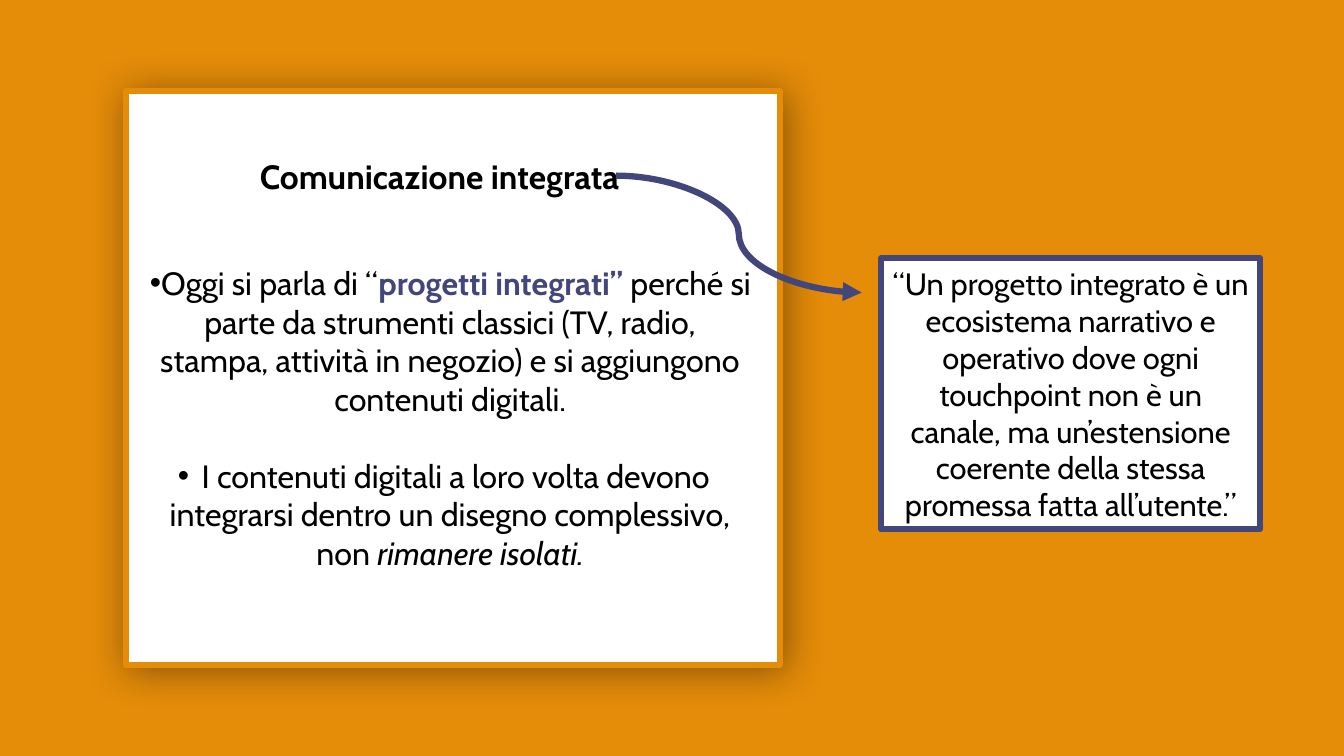
from lxml import etree
from pptx import Presentation
from pptx.dml import color
from pptx.enum import shapes, text
from pptx.oxml import ns
from pptx.util import Pt

ORANGE = color.RGBColor(0xE5, 0x8C, 0x09)
INDIGO = color.RGBColor(0x43, 0x46, 0x7B)
WHITE = color.RGBColor(0xFF, 0xFF, 0xFF)
BLACK = color.RGBColor(0, 0, 0)
FONT = "Cabin"
BORDER = Pt(4.5)

INTEGRATED = [
    ("Oggi si parla di “", {}),
    ("progetti integrati” ", {"bold": True, "color": INDIGO}),
    ("perché si parte da strumenti classici (TV, radio, stampa, attività in "
     "negozio) e si aggiungono contenuti digitali.", {}),
]
DIGITAL = [
    ("I contenuti digitali a loro volta devono integrarsi dentro un disegno "
     "complessivo, non ", {}),
    ("rimanere isolati.", {"italic": True}),
]
QUOTE = ("“Un progetto integrato è un ecosistema narrativo e operativo dove "
         "ogni touchpoint non è un canale, ma un’estensione coerente della "
         "stessa promessa fatta all’utente.”")


def add_xml(parent, tag, **attrs):
    return etree.SubElement(parent, ns.qn(tag), attrs)


def add_run(p, words, size, **formats):
    r = p.add_run()
    r.text = words
    r.font.color.rgb = formats.pop("color", BLACK)
    for name, value in {"name": FONT, "size": Pt(size), **formats}.items():
        setattr(r.font, name, value)


def add_panel(s, box, border):
    sp = s.shapes.add_shape(shapes.MSO_SHAPE.RECTANGLE, *map(Pt, box))
    sp.shadow.inherit = False
    sp.fill.solid()
    sp.fill.fore_color.rgb = WHITE
    sp.line.color.rgb = border
    sp.line.width = BORDER
    return sp


def add_shadow(sp):
    effects = sp._element.spPr.find(ns.qn("a:effectLst"))
    shadow = add_xml(effects, "a:outerShdw", blurRad=str(Pt(28)),
                     dist=str(Pt(3)), dir="2700000", algn="tl", rotWithShape="0")
    tint = add_xml(shadow, "a:srgbClr", val=str(BLACK))
    add_xml(tint, "a:alpha", val="40000")


def add_text(s, box):
    tf = s.shapes.add_textbox(*map(Pt, box)).text_frame
    tf.word_wrap = True
    return tf


def add_bullets(tf, items, size, gap):
    for i, runs in enumerate(items):
        p = tf.add_paragraph() if i else tf.paragraphs[0]
        p.alignment = text.PP_ALIGN.CENTER
        if i:
            p.space_before = Pt(gap)
        pPr = p._p.get_or_add_pPr()
        add_xml(pPr, "a:buFont", typeface="Arial")
        add_xml(pPr, "a:buChar", char="•")
        for words, formats in runs:
            add_run(p, words, size, **formats)


def add_curved_arrow(s, start, end):
    cx = s.shapes.add_connector(shapes.MSO_CONNECTOR.CURVE,
                                *map(Pt, start + end))
    cx.line.color.rgb = INDIGO
    cx.line.width = BORDER
    add_xml(cx.line._get_or_add_ln(), "a:tailEnd", type="triangle")
    add_xml(cx._element.spPr, "a:effectLst")


def main():
    prs = Presentation()
    prs.slide_width, prs.slide_height = Pt(960), Pt(540)
    s = prs.slides.add_slide(prs.slide_layouts[6])
    s.background.fill.solid()
    s.background.fill.fore_color.rgb = ORANGE

    add_shadow(add_panel(s, (90, 65, 467, 410), ORANGE))
    title = add_text(s, (178.5, 107.5, 487, 36))
    add_run(title.paragraphs[0], "Comunicazione integrata", 24, bold=True)
    body = add_text(s, (100, 184.5, 443.5, 230))
    add_bullets(body, [INTEGRATED, DIGITAL], 23, 27.5)

    tf = add_panel(s, (629.5, 184.5, 270.5, 193.5), INDIGO).text_frame
    tf.word_wrap = True
    tf.paragraphs[0].alignment = text.PP_ALIGN.CENTER
    add_run(tf.paragraphs[0], QUOTE, 22)
    add_curved_arrow(s, (440, 125.5), (615.5, 209))
    prs.save("out.pptx")


if __name__ == "__main__":
    main()
